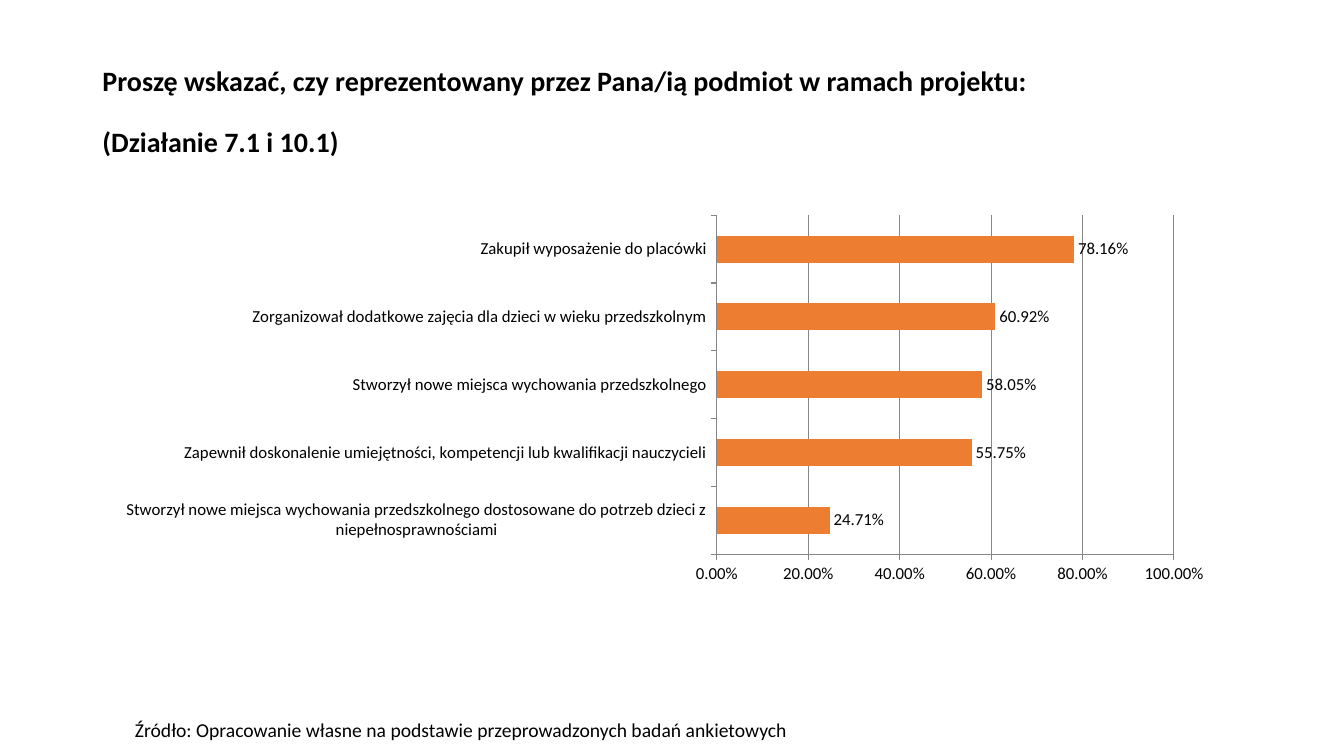
"""Build a survey slide with a horizontal bar chart."""
import pptx
import pptx.chart.data
import pptx.dml.color
import pptx.enum.chart
import pptx.enum.text
import pptx.util

Pt = pptx.util.Pt
FONT = "Calibri"
BLACK, ORANGE, GREY = "000000", "ED7D31", "878787"
PERCENT = "0.00%"

TITLE = [
    "Proszę wskazać, czy reprezentowany przez Pana/ią podmiot w ramach projektu:",
    "(Działanie 7.1 i 10.1)",
]
SOURCE = ["Źródło: Opracowanie własne na podstawie przeprowadzonych badań ankietowych"]
ANSWERS = {
    "Stworzył nowe miejsca wychowania przedszkolnego dostosowane do potrzeb dzieci z niepełnosprawnościami": 0.2471,
    "Zapewnił doskonalenie umiejętności, kompetencji lub kwalifikacji nauczycieli": 0.5575,
    "Stworzył nowe miejsca wychowania przedszkolnego": 0.5805,
    "Zorganizował dodatkowe zajęcia dla dzieci w wieku przedszkolnym": 0.6092,
    "Zakupił wyposażenie do placówki": 0.7816,
}

TITLE_AREA = (66, 28.8, 828, 104.4)
CHART_AREA = (74.2, 148.3, 801.4, 274.3)
SOURCE_AREA = (89.3, 511.2, 828, 28.8)


def color(hex_text):
    """Return the colour for a hex string."""
    return pptx.dml.color.RGBColor.from_string(hex_text)


def style_font(font, size, bold=False):
    """Apply the slide typeface to a font."""
    font.name, font.size, font.bold = FONT, Pt(size), bold
    font.color.rgb = color(BLACK)


def write(box, lines, size, bold=False, gap=0, anchor="TOP"):
    """Write one paragraph per line into a shape, with a gap between them."""
    frame = box.text_frame
    frame.word_wrap = True
    frame.auto_size = pptx.enum.text.MSO_AUTO_SIZE.NONE
    frame.vertical_anchor = getattr(pptx.enum.text.MSO_ANCHOR, anchor)
    for index, line in enumerate(lines):
        para = frame.add_paragraph() if index else frame.paragraphs[0]
        para.alignment = pptx.enum.text.PP_ALIGN.LEFT
        para.line_spacing = 0.9
        para.space_before = Pt(gap if index else 0)
        span = para.add_run()
        span.text = line
        style_font(span.font, size, bold)


def add_answers_chart(page):
    """Add the bar chart of survey answers."""
    data = pptx.chart.data.CategoryChartData(number_format=PERCENT)
    data.categories = list(ANSWERS)
    data.add_series("Series 1", list(ANSWERS.values()))
    kind = pptx.enum.chart.XL_CHART_TYPE.BAR_CLUSTERED
    chart = page.shapes.add_chart(kind, *map(Pt, CHART_AREA), data).chart
    chart.has_legend = False
    chart.has_title = False
    style_font(chart.font, 12)

    plot = chart.plots[0]
    plot.gap_width = 150
    plot.vary_by_categories = False
    fill = plot.series[0].format.fill
    fill.solid()
    fill.fore_color.rgb = color(ORANGE)
    plot.has_data_labels = True
    labels = plot.data_labels
    labels.show_value = True
    labels.number_format = PERCENT
    labels.number_format_is_linked = False
    labels.position = pptx.enum.chart.XL_LABEL_POSITION.OUTSIDE_END

    scale = chart.value_axis
    scale.minimum_scale, scale.maximum_scale, scale.major_unit = 0, 1, 0.2
    scale.has_major_gridlines = True
    scale.tick_labels.number_format = PERCENT
    scale.tick_labels.number_format_is_linked = False
    for axis in (scale, chart.category_axis):
        axis.major_tick_mark = pptx.enum.chart.XL_TICK_MARK.OUTSIDE
    for part in (scale, scale.major_gridlines, chart.category_axis):
        part.format.line.color.rgb = color(GREY)
        part.format.line.width = Pt(0.75)


def main():
    """Assemble and save the deck."""
    deck = pptx.Presentation()
    deck.slide_width, deck.slide_height = Pt(960), Pt(540)
    page = deck.slides.add_slide(deck.slide_layouts[5])
    title = page.shapes.title
    title.left, title.top, title.width, title.height = map(Pt, TITLE_AREA)
    write(title, TITLE, 20, bold=True, gap=22, anchor="MIDDLE")
    source = page.shapes.add_textbox(*map(Pt, SOURCE_AREA))
    write(source, SOURCE, 14)
    add_answers_chart(page)
    deck.save("out.pptx")


if __name__ == "__main__":
    main()
